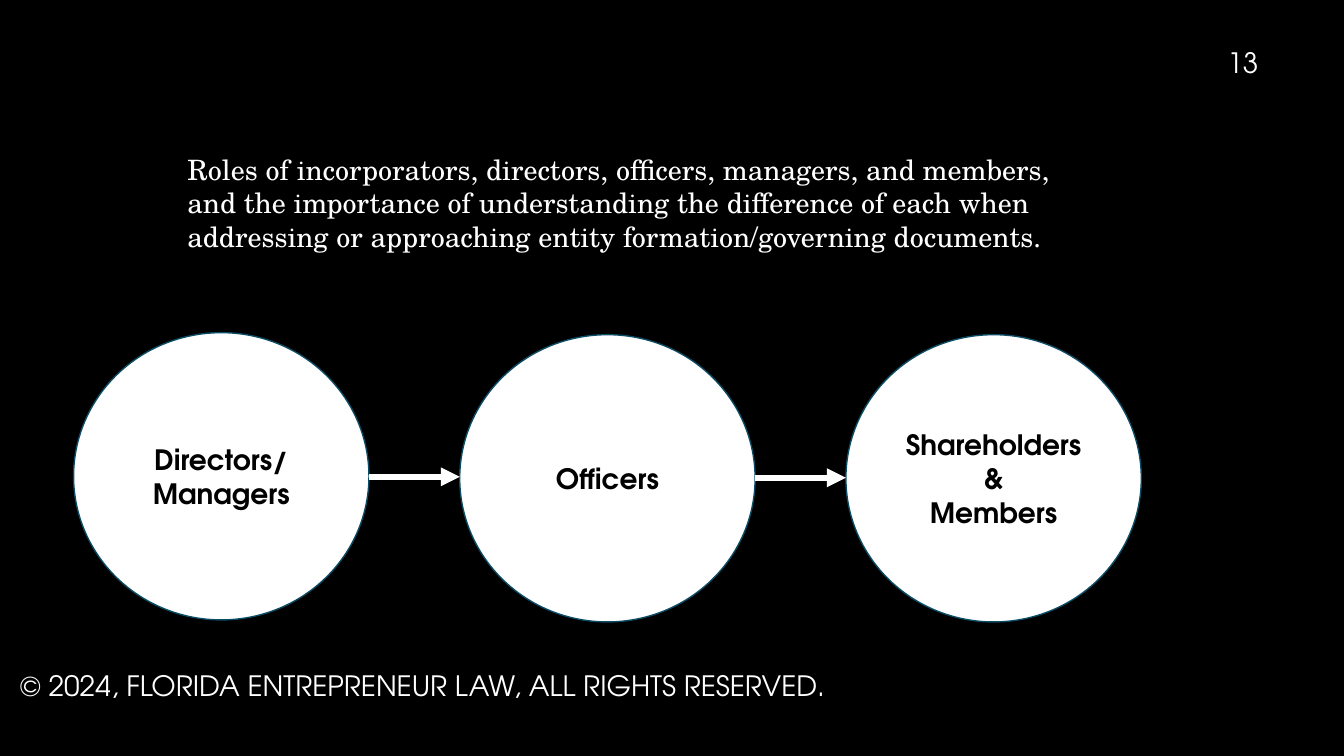
import pptx
import pptx.dml.color
import pptx.enum.shapes
import pptx.enum.text
import pptx.oxml.ns
import pptx.util
from lxml import etree

Inches = pptx.util.Inches
Align = pptx.enum.text.PP_ALIGN
Anchor = pptx.enum.text.MSO_ANCHOR


class RolesSlide:
    colors = {"background": "000000", "light": "FFFFFF", "dark": "000000", "outline": "0C4C64"}
    label_font = "TeX Gyre Adventor"
    body_font = "TeX Gyre Schola"
    text_size = 20

    def __init__(self, presentation):
        self.slide = presentation.slides.add_slide(presentation.slide_layouts[6])
        fill = self.slide.background.fill
        fill.solid()
        fill.fore_color.rgb = self.color("background")

    def color(self, name):
        return pptx.dml.color.RGBColor.from_string(self.colors[name])

    def set_text(self, shape, lines, font, color, align, anchor, bold=False):
        frame = shape.text_frame
        frame.word_wrap = True
        frame.vertical_anchor = anchor
        frame.text = "\n".join(lines)
        for paragraph in frame.paragraphs:
            paragraph.alignment = align
            for run in paragraph.runs:
                run.font.name = font
                run.font.size = pptx.util.Pt(self.text_size)
                run.font.bold = bold
                run.font.color.rgb = self.color(color)

    def text(self, left, top, width, height, lines, font=label_font,
             align=Align.LEFT, anchor=Anchor.MIDDLE):
        box = self.slide.shapes.add_textbox(
            Inches(left), Inches(top), Inches(width), Inches(height))
        self.set_text(box, lines, font, "light", align, anchor)

    def circle(self, left, top, width, height, lines):
        shape = self.slide.shapes.add_shape(
            pptx.enum.shapes.MSO_SHAPE.OVAL,
            Inches(left), Inches(top), Inches(width), Inches(height))
        shape.shadow.inherit = False
        shape.fill.solid()
        shape.fill.fore_color.rgb = self.color("light")
        shape.line.color.rgb = self.color("outline")
        shape.line.width = pptx.util.Pt(1)
        self.set_text(shape, lines, self.label_font, "dark", Align.CENTER, Anchor.MIDDLE, bold=True)

    def arrow(self, left, right, y):
        connector = self.slide.shapes.add_connector(
            pptx.enum.shapes.MSO_CONNECTOR.STRAIGHT,
            Inches(left), Inches(y), Inches(right), Inches(y))
        connector.line.color.rgb = self.color("light")
        connector.line.width = pptx.util.Pt(4.5)
        qn = pptx.oxml.ns.qn
        properties = connector._element.spPr
        etree.SubElement(properties.find(qn("a:ln")), qn("a:tailEnd"), type="triangle")
        etree.SubElement(properties, qn("a:effectLst"))


def main():
    presentation = pptx.Presentation()
    presentation.slide_width = Inches(13.33)
    presentation.slide_height = Inches(7.5)
    slide = RolesSlide(presentation)

    slide.text(0.1, 6.6, 8.5, 0.4, ["© 2024, FLORIDA ENTREPRENEUR LAW, ALL RIGHTS RESERVED."])
    slide.text(9.58, 0.42, 3, 0.4, ["13"], align=Align.RIGHT)
    slide.text(1.76, 1.46, 10.5, 1.45, [
        "Roles of incorporators, directors, officers, managers, and members,",
        "and the importance of understanding the difference of each when",
        "addressing or approaching entity formation/governing documents.",
    ], font=slide.body_font, anchor=Anchor.TOP)

    first_left, pitch, width, height = 0.73, 3.83, 2.93, 2.85
    roles = [
        (3.3, ["Directors/", "Managers"]),
        (3.32, ["Officers"]),
        (3.32, ["Shareholders", "&", "Members"]),
    ]
    for index, (top, lines) in enumerate(roles):
        slide.circle(first_left + index * pitch, top, width, height, lines)
    for index, y in enumerate([4.73, 4.74]):
        left = first_left + index * pitch
        slide.arrow(left + width, left + pitch, y)

    presentation.save("out.pptx")


if __name__ == "__main__":
    main()
